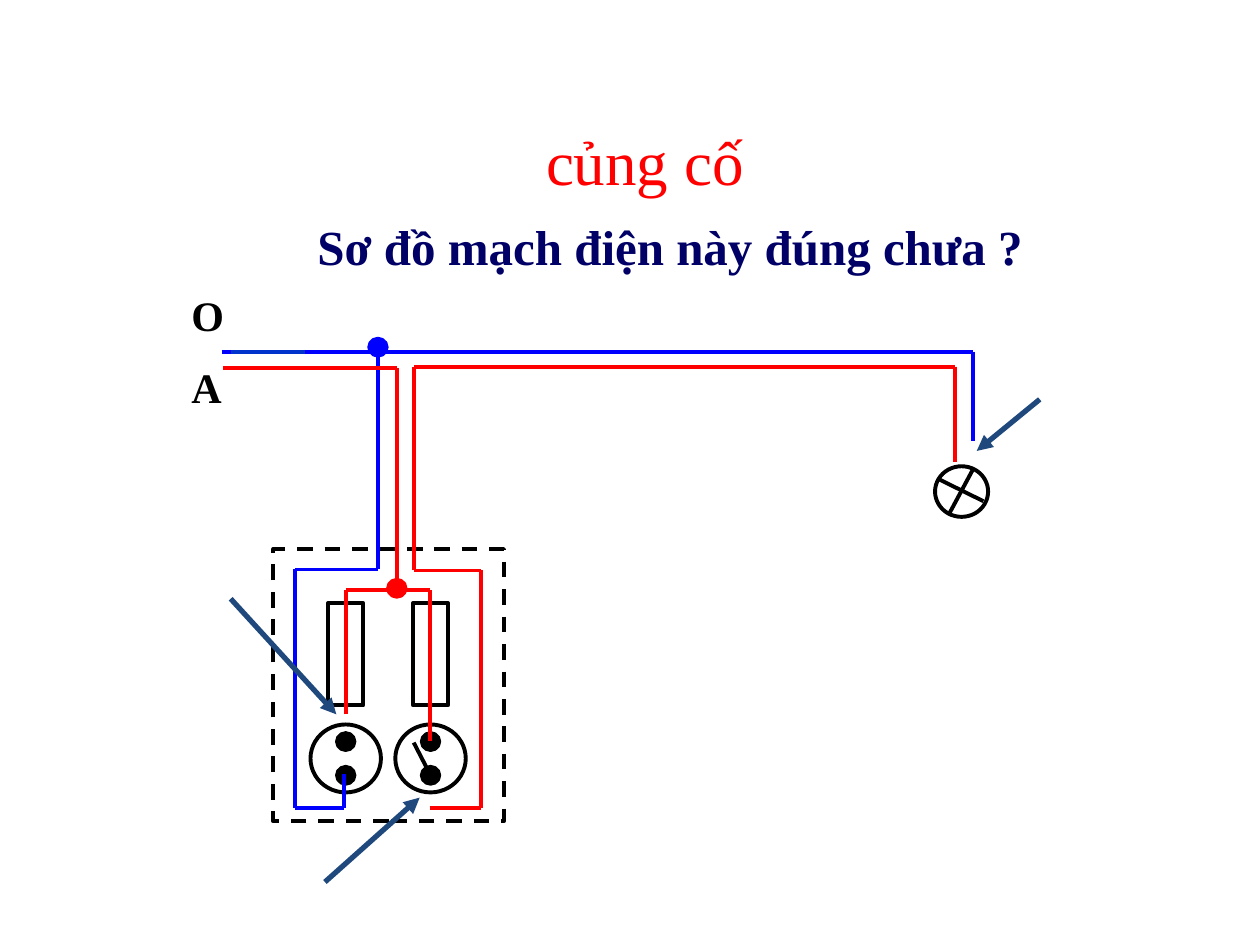
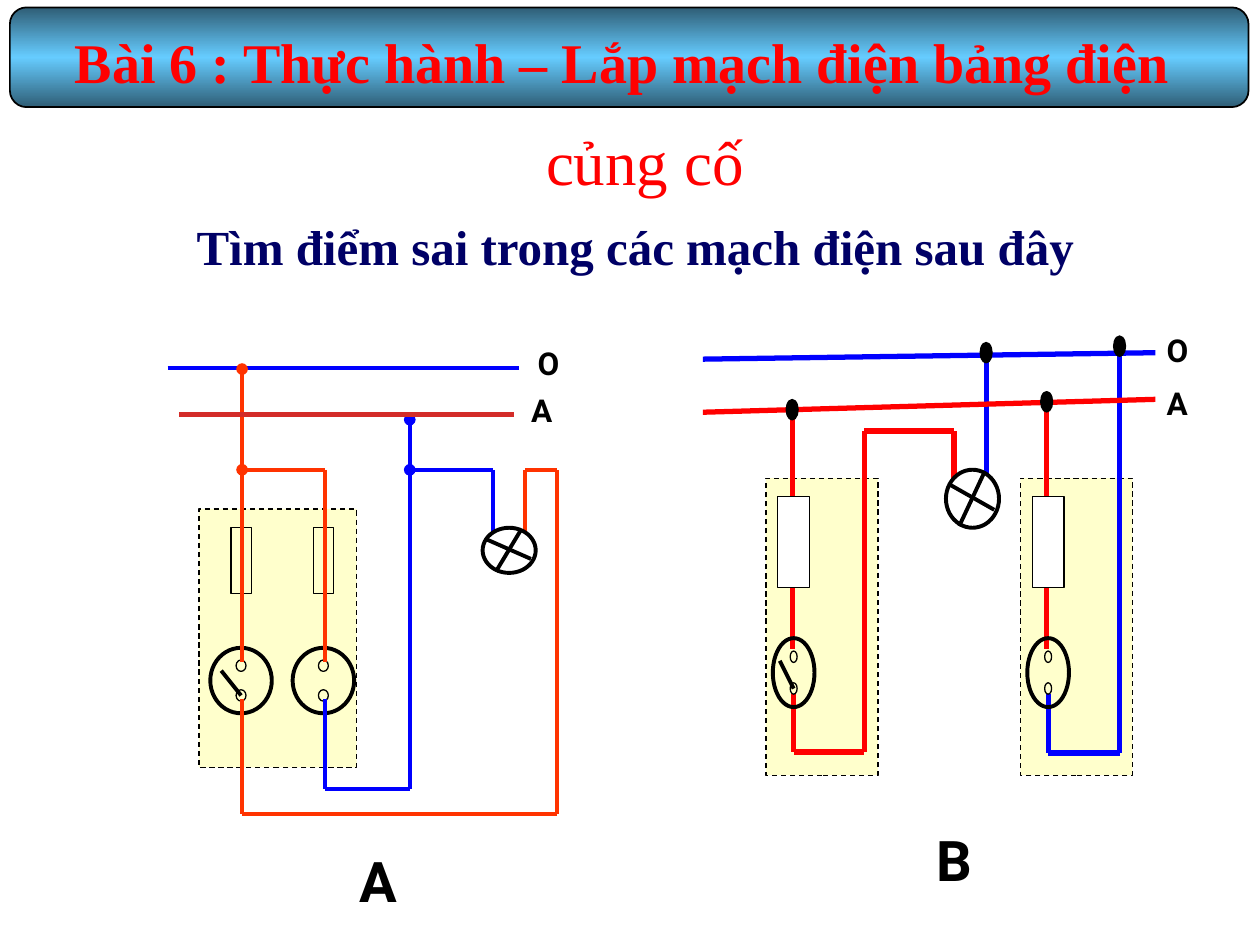
import copy
import itertools

import pptx
import pptx.dml.color
import pptx.enum.dml
import pptx.enum.shapes
import pptx.enum.text
import pptx.oxml.ns
import pptx.util
from lxml import etree

Cm = pptx.util.Cm
Pt = pptx.util.Pt
RGBColor = pptx.dml.color.RGBColor
Preset = pptx.enum.shapes.MSO_SHAPE
Align = pptx.enum.text.PP_ALIGN
qn = pptx.oxml.ns.qn

BLACK = RGBColor.from_string("000000")
WHITE = RGBColor.from_string("FFFFFF")
RED = RGBColor.from_string("FF0000")
BLUE = RGBColor.from_string("0000FF")
ROYAL = RGBColor.from_string("0033CC")
ORANGE = RGBColor.from_string("FF3300")
CRIMSON = RGBColor.from_string("D32C29")
NAVY = RGBColor.from_string("000066")
STEEL = RGBColor.from_string("1F497D")
CREAM = RGBColor.from_string("FFFFCC")
BAND_EDGE = RGBColor.from_string("2F5E76")
BAND_MIDDLE = RGBColor.from_string("66CCFF")

SERIF, SANS = "Times New Roman", "Roboto"
HAIR, MEDIUM, THICK = Pt(0.75), Pt(2.25), Pt(3)
LAMP_WIDTH = 1.07
LAMP_CROSS = [((0.06, 0.25), (0.91, 0.69)), ((0.73, 0.03), (0.25, 0.97))]
HEADLINE_TOP, HEADLINE_HEIGHT = 4.24, 1.45
BUS_LETTER = (1.09, 1.02), 18
CAPTION = (1.32, 1.6), 32

TITLE = "củng cố"
LESSON = "Bài 6 : Thực hành – Lắp mạch điện bảng điện"

# wires: (colour, weight, node at start, first direction, x, y, next turns)
CHECK_CIRCUIT = dict(
    boards=([5.51], 11.07, (4.65, 5.49), WHITE),
    columns=(6.97, 8.68), outline=MEDIUM, wires_on_top=True,
    fuse=(12.16, (0.71, 2.06), WHITE),
    socket=(15.29, (1.42, 1.37)),
    contact=(0.34, (0.35, 0.34), BLACK),
    lever=(1, 0.34, 0.66),
    node=((0.35, 0.34), None),
    lamp=(18.85, 9.4, 1.02),
    wires=[
        (BLUE, MEDIUM, False, "h", 4.47, 7.09, 19.62, 8.89),
        (ROYAL, MEDIUM, False, "h", 4.65, 7.09, 6.15),
        (BLUE, MEDIUM, True, "v", 7.62, 7, 11.48, 5.94, 16.28, 6.94, 15.6),
        (RED, MEDIUM, False, "h", 8.66, 16.28, 9.7, 11.5, 8.35, 7.39, 19.25, 9.32),
        (RED, MEDIUM, False, "v", 6.98, 14.4, 11.89, 8.66, 14.94),
        (RED, MEDIUM, True, "v", 8, 11.86, 7.42, 4.5),
    ],
    slants=[], letters=[],
    arrows=[((4.65, 12.07), (6.78, 14.4)), ((20.96, 8.05), (19.69, 9.09)),
            ((6.55, 17.78), (8.46, 16.08))],
)
CIRCUIT_A = dict(
    boards=([4.01], 10.26, (3.18, 5.21), CREAM),
    columns=(4.86, 6.52), outline=HAIR, wires_on_top=True,
    fuse=(10.64, (0.41, 1.32), None),
    socket=(13.72, (1.24, 1.32)),
    contact=(0.3, (0.2, 0.23), None),
    lever=(0, 0.4, 0.5),
    node=None,
    lamp=(9.73, 10.64, 0.91),
    wires=[
        (BLUE, MEDIUM, False, "h", 3.38, 7.42, 10.46),
        (RED, HAIR, False, "v", 6.53, 10.31, 12.22),
        (ORANGE, MEDIUM, True, "v", 4.88, 7.44, 13.34),
        (ORANGE, MEDIUM, True, "h", 4.88, 9.47, 6.55, 13.34),
        (ORANGE, MEDIUM, False, "v", 4.88, 14.1, 16.41, 11.23, 9.47, 10.59, 10.77),
        (BLUE, MEDIUM, True, "v", 8.26, 8.46, 15.9, 6.55, 14.1),
        (BLUE, MEDIUM, True, "h", 8.26, 9.47, 9.94, 10.77),
        (CRIMSON, THICK, False, "h", 3.61, 8.36, 10.36),
    ],
    slants=[], arrows=[],
    letters=[("O", 10.59, 6.81, BUS_LETTER), ("A", 10.46, 7.75, BUS_LETTER),
             ("A", 6.99, 16.94, CAPTION)],
)
CIRCUIT_B = dict(
    boards=((15.44, 20.57), 9.64, (2.26, 5.99), CREAM),
    columns=(16, 21.13), outline=HAIR, wires_on_top=False,
    fuse=(10.01, (0.64, 1.83), WHITE),
    socket=(13.56, (0.84, 1.39)),
    contact=(0.32, (0.14, 0.23), None),
    lever=(0, 0.28, 0.56),
    node=((0.24, 0.41), BLACK),
    lamp=(19.07, 9.47, 1.17),
    wires=[
        (BLUE, THICK, True, "v", 19.88, 7.11, 9.65),
        (RED, THICK, True, "v", 15.97, 8.26, 13.08),
        (RED, THICK, True, "v", 21.1, 8.1, 13.08),
        (RED, THICK, False, "v", 16, 14, 15.16, 17.42, 8.69, 19.23, 9.7),
        (BLUE, THICK, True, "v", 22.57, 6.98, 15.18, 21.13, 14),
    ],
    slants=[(BLUE, (14.17, 7.24), (23.29, 7.11)), (RED, (14.17, 8.31), (23.29, 8.05))],
    arrows=[],
    letters=[("O", 23.27, 6.55, BUS_LETTER), ("A", 23.27, 7.62, BUS_LETTER),
             ("B", 18.62, 16.51, CAPTION)],
)
SLIDES = [
    dict(lesson=None, headline="Sơ đồ mạch điện này đúng chưa ?",
         left=6.15, width=16.94, align=Align.LEFT,
         bus_names=["O", "A"], circuits=[CHECK_CIRCUIT]),
    dict(lesson=LESSON, headline="Tìm điểm sai trong các mạch điện sau đây",
         left=2.11, width=21.39, align=Align.CENTER,
         bus_names=[], circuits=[CIRCUIT_A, CIRCUIT_B]),
]


def write_lines(frame, lines, size, font, colour, align, bold=True):
    for index, words in enumerate(lines):
        paragraph = frame.add_paragraph() if index else frame.paragraphs[0]
        paragraph.alignment = align
        if index:
            paragraph.space_before = Pt(size / 2)
        run = paragraph.add_run()
        run.text = words
        run.font.size = Pt(size)
        run.font.name = font
        run.font.bold = bold
        run.font.color.rgb = colour


def add_text(slide, lines, box, size, font, colour, align=Align.LEFT):
    frame = slide.shapes.add_textbox(*map(Cm, box)).text_frame
    frame.word_wrap = True
    write_lines(frame, lines, size, font, colour, align)


def add_title(slide):
    title = slide.shapes.title
    title.left, title.top, title.width, title.height = map(Cm, (6.55, 2.34, 12.9, 1.68))
    frame = title.text_frame
    frame.word_wrap = False
    frame.auto_size = pptx.enum.text.MSO_AUTO_SIZE.NONE
    frame.vertical_anchor = pptx.enum.text.MSO_ANCHOR.TOP
    write_lines(frame, [TITLE], 36, SERIF, RED, Align.CENTER, bold=False)


def add_part(slide, form, box, fill, weight, outline=BLACK):
    part = slide.shapes.add_shape(form, *map(Cm, box))
    part.shadow.inherit = False
    if fill is None:
        part.fill.background()
    else:
        part.fill.solid()
        part.fill.fore_color.rgb = fill
    part.line.color.rgb = outline
    part.line.width = weight
    return part


def add_centred(slide, form, x, y, size, fill, weight, outline=BLACK):
    width, height = size
    box = (x - width / 2, y - height / 2, width, height)
    add_part(slide, form, box, fill, weight, outline)


def add_line(slide, colour, weight, start, end, head=None, tail=None):
    line = slide.shapes.add_connector(
        pptx.enum.shapes.MSO_CONNECTOR.STRAIGHT, *map(Cm, (*start, *end)))
    line.line.color.rgb = colour
    line.line.width = weight
    outline = line.line._get_or_add_ln()
    for tag, tip in (("a:headEnd", head), ("a:tailEnd", tail)):
        if tip:
            etree.SubElement(outline, qn(tag), type=tip)
    etree.SubElement(line._element.spPr, qn("a:effectLst"))


def trace(direction, x, y, turns):
    points = [(x, y)]
    for target in turns:
        if direction == "h":
            x, direction = target, "v"
        else:
            y, direction = target, "h"
        points.append((x, y))
    return points


def add_wires(slide, circuit):
    for colour, weight, has_node, direction, x, y, *turns in circuit["wires"]:
        head = "oval" if has_node and not circuit["node"] else None
        for start, end in itertools.pairwise(trace(direction, x, y, turns)):
            add_line(slide, colour, weight, start, end, head)
            head = None
    for colour, start, end in circuit["slants"]:
        add_line(slide, colour, THICK, start, end)


def add_nodes(slide, circuit):
    if circuit["node"]:
        size, fixed = circuit["node"]
        for colour, _, has_node, _, x, y, *_ in circuit["wires"]:
            if has_node:
                shade = fixed or colour
                add_centred(slide, Preset.OVAL, x, y, size, shade, circuit["outline"], shade)


def add_boards(slide, circuit):
    lefts, top, size, fill = circuit["boards"]
    for left in lefts:
        board = add_part(slide, Preset.RECTANGLE, (left, top, *size), fill, circuit["outline"])
        board.line.dash_style = pptx.enum.dml.MSO_LINE.DASH


def add_devices(slide, circuit):
    outline = circuit["outline"]
    fuse_top, fuse_size, fuse_fill = circuit["fuse"]
    middle, socket_size = circuit["socket"]
    reach, contact_size, contact_fill = circuit["contact"]
    for x in circuit["columns"]:
        add_centred(slide, Preset.RECTANGLE, x, fuse_top + fuse_size[1] / 2,
                    fuse_size, fuse_fill, outline)
        add_centred(slide, Preset.OVAL, x, middle, socket_size, None, MEDIUM)
        for y in (middle - reach, middle + reach):
            add_centred(slide, Preset.OVAL, x, y, contact_size, contact_fill, outline)
    column, run, rise = circuit["lever"]
    x, y = circuit["columns"][column], middle + reach
    add_line(slide, BLACK, MEDIUM, (x, y), (x - run, y - rise))


def add_lamp(slide, left, top, height):
    add_part(slide, Preset.OVAL, (left, top, LAMP_WIDTH, height), WHITE, MEDIUM)
    for bar in LAMP_CROSS:
        ends = [(left + x * LAMP_WIDTH, top + y * height) for x, y in bar]
        add_line(slide, BLACK, MEDIUM, *ends)


def add_circuit(slide, circuit):
    add_boards(slide, circuit)
    layers = [add_devices, add_wires]
    for add_layer in layers if circuit["wires_on_top"] else reversed(layers):
        add_layer(slide, circuit)
    add_nodes(slide, circuit)
    add_lamp(slide, *circuit["lamp"])
    for start, end in circuit["arrows"]:
        add_line(slide, STEEL, THICK, start, end, tail="triangle")
    for letter, left, top, (box_size, size) in circuit["letters"]:
        add_text(slide, [letter], (left, top, *box_size), size, SANS, BLACK)


def add_lesson_band(slide, lesson):
    band = add_part(slide, Preset.ROUNDED_RECTANGLE, (0.2, 0.15, 24.97, 2.01),
                    BAND_EDGE, Pt(1))
    band.fill.gradient()
    band.fill.gradient_angle = 90
    first = band._element.spPr.find(".//" + qn("a:gs"))
    first.addnext(copy.deepcopy(first))
    for index, stop in enumerate(band.fill.gradient_stops):
        stop.position = index / 2
        stop.color.rgb = BAND_MIDDLE if index == 1 else BAND_EDGE
    add_text(slide, [lesson], (1.26, 0.43, 23.8, 1.6), 32, SERIF, RED, Align.JUSTIFY)


def build_slide(deck, content):
    slide = deck.slides.add_slide(deck.slide_layouts.get_by_name("Title Only"))
    if content["lesson"]:
        add_lesson_band(slide, content["lesson"])
    add_title(slide)
    headline_box = (content["left"], HEADLINE_TOP, content["width"], HEADLINE_HEIGHT)
    add_text(slide, [content["headline"]], headline_box, 28, SERIF, NAVY, content["align"])
    for circuit in content["circuits"]:
        add_circuit(slide, circuit)
    if content["bus_names"]:
        add_text(slide, content["bus_names"], (3.61, 5.72, 0.84, 2.79), 24, SERIF, BLACK)


def main():
    deck = pptx.Presentation()
    deck.slide_width, deck.slide_height = Cm(25.4), Cm(19.05)
    for content in SLIDES:
        build_slide(deck, content)
    deck.save("out.pptx")


if __name__ == "__main__":
    main()
